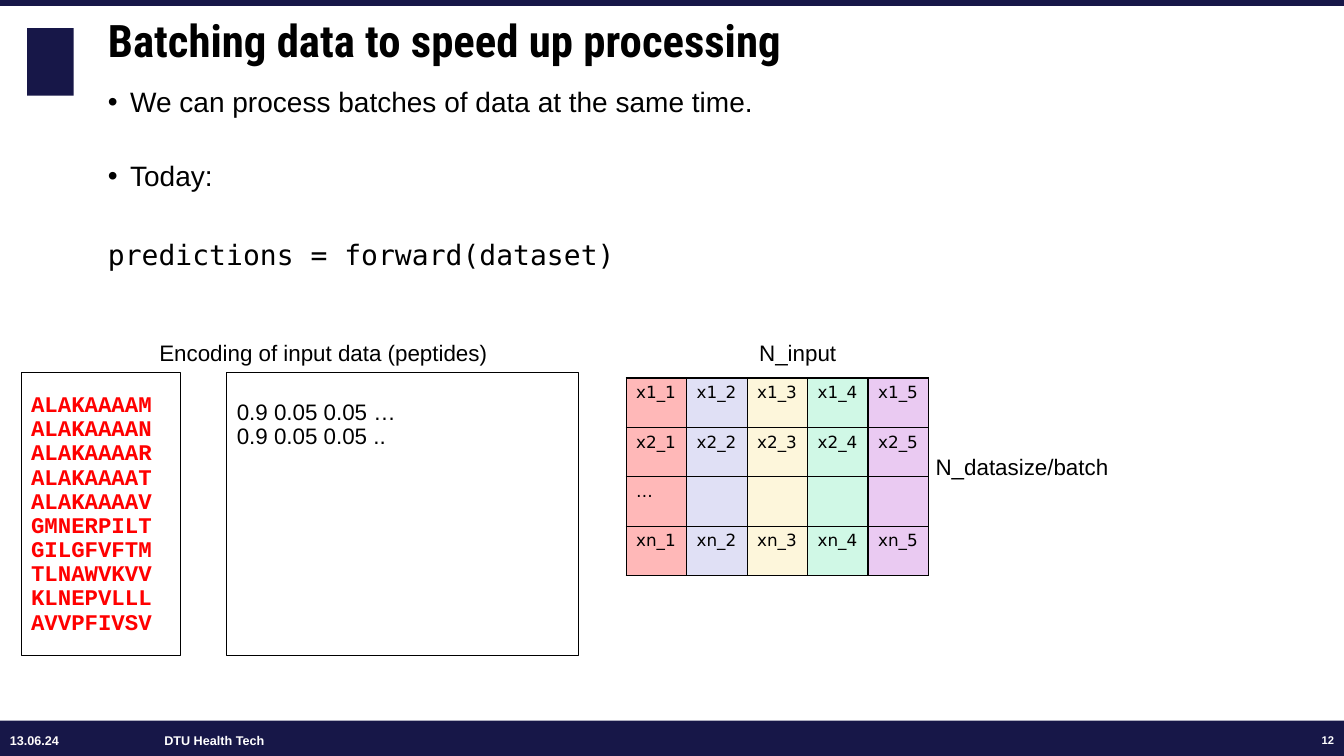
from pptx import Presentation
from pptx.dml.color import RGBColor
from pptx.enum.shapes import MSO_SHAPE
from pptx.enum.text import MSO_ANCHOR, MSO_AUTO_SIZE, PP_ALIGN
from pptx.oxml.ns import qn
from pptx.util import Inches, Pt
from lxml.etree import SubElement

# Content
COLORS = {"navy": "171748", "white": "FFFFFF", "date": "FFFCFB", "black": "000000", "red": "FF0000"}
COLUMN_FILLS = ["FFB8B8", "E0E0F5", "FDF6DB", "D0F8E6", "EACAF2"]
TITLE = "Batching data to speed up processing"
# text, font, bullet, space before in points
BODY = [
    ("We can process batches of data at the same time.", "Arial", True, 0),
    ("Today:", "Arial", True, 29),
    ("predictions = forward(dataset)", "DejaVu Sans Mono", False, 32),
]
PEPTIDES = ["ALAKAAAAM", "ALAKAAAAN", "ALAKAAAAR", "ALAKAAAAT", "ALAKAAAAV",
            "GMNERPILT", "GILGFVFTM", "TLNAWVKVV", "KLNEPVLLL", "AVVPFIVSV"]
ENCODING = ["0.9 0.05 0.05 …", "0.9 0.05 0.05 .."]
MATRIX = [
    ["x1_1", "x1_2", "x1_3", "x1_4", "x1_5"],
    ["x2_1", "x2_2", "x2_3", "x2_4", "x2_5"],
    ["…", "", "", "", ""],
    ["xn_1", "xn_2", "xn_3", "xn_4", "xn_5"],
]
# text, left, top, width
LABELS = [
    ("Encoding of input data (peptides)", 1.58, 3.36, 3.29),
    ("N_input", 7.53, 3.36, 0.77),
    ("N_datasize/batch", 9.28, 4.5, 1.73),
]
# text, left, width, left and right margin, size, colour, alignment
FOOTER = [
    ("13.06.24", 0, 1.58, 0.1, 9, "date", PP_ALIGN.LEFT),
    ("DTU Health Tech", 1.63, 3.72, 0, 9, "white", PP_ALIGN.LEFT),
    ("12", 12.7, 0.63, 0.1, 8, "white", PP_ALIGN.RIGHT),
]
COLUMN_WIDTH, ROW_HEIGHT = 0.6, 0.49
PANEL_TOP, PANEL_HEIGHT = 3.7, 2.8


def inches(*lengths):
    return [Inches(length) for length in lengths]


def write(frame, lines, size=16, font="Arial", color="black", bold=False,
          align=PP_ALIGN.LEFT, anchor=MSO_ANCHOR.TOP, spacing=None, margins=None, wrap=True):
    frame.word_wrap = wrap
    frame.auto_size = MSO_AUTO_SIZE.NONE
    frame.vertical_anchor = anchor
    if margins is not None:
        (frame.margin_left, frame.margin_top,
         frame.margin_right, frame.margin_bottom) = inches(*margins)
    for index, line in enumerate(lines):
        paragraph = frame.paragraphs[0] if index == 0 else frame.add_paragraph()
        paragraph.alignment = align
        if spacing:
            paragraph.line_spacing = spacing
        run = paragraph.add_run()
        run.text = line
        run.font.size, run.font.name, run.font.bold = Pt(size), font, bold
        run.font.color.rgb = RGBColor.from_string(COLORS[color])


def add_rectangle(slide, box, fill=None, line=None):
    rectangle = slide.shapes.add_shape(MSO_SHAPE.RECTANGLE, *inches(*box))
    rectangle.shadow.inherit = False
    if fill:
        rectangle.fill.solid()
        rectangle.fill.fore_color.rgb = RGBColor.from_string(COLORS[fill])
    else:
        rectangle.fill.background()
    if line:
        rectangle.line.color.rgb = RGBColor.from_string(COLORS[line])
        rectangle.line.width = Pt(0.75)
    else:
        rectangle.line.fill.background()
    return rectangle


def place(shape, left, top, width, height):
    shape.left, shape.top, shape.width, shape.height = inches(left, top, width, height)


def set_bullet(paragraph, bullet):
    properties = paragraph._p.get_or_add_pPr()
    indent = Inches(0.22) if bullet else 0
    properties.set("marL", str(indent))
    properties.set("indent", str(-indent))
    if bullet:
        SubElement(properties, qn("a:buChar"), char="•")
    else:
        SubElement(properties, qn("a:buNone"))


def add_borders(cell):
    properties = cell._tc.get_or_add_tcPr()
    for side in ("lnL", "lnR", "lnT", "lnB"):
        border = SubElement(properties, qn(f"a:{side}"), w=str(Pt(1)))
        fill = SubElement(border, qn("a:solidFill"))
        SubElement(fill, qn("a:srgbClr"), val=COLORS["black"])


def add_matrix(slide):
    columns, rows = len(COLUMN_FILLS), len(MATRIX)
    matrix = slide.shapes.add_table(
        rows, columns, *inches(6.21, 3.75, columns * COLUMN_WIDTH, rows * ROW_HEIGHT)).table
    matrix.first_row = matrix.horz_banding = False
    for row, values in enumerate(MATRIX):
        for column, value in enumerate(values):
            cell = matrix.cell(row, column)
            cell.margin_right = 0
            add_borders(cell)
            cell.fill.solid()
            cell.fill.fore_color.rgb = RGBColor.from_string(COLUMN_FILLS[column])
            if value:
                write(cell.text_frame, [value], size=12, font="DejaVu Sans")


def main():
    deck = Presentation()
    deck.slide_width, deck.slide_height = inches(13.33, 7.5)
    slide = deck.slides.add_slide(deck.slide_layouts[1])
    title, body = slide.placeholders

    # Bands and emblem block
    add_rectangle(slide, (0, 7.15, 13.33, 0.35), fill="navy")
    add_rectangle(slide, (0, 0, 13.33, 0.06), fill="navy")
    add_rectangle(slide, (0.27, 0.28, 0.46, 0.67), fill="navy")

    # Title and body
    place(title, 1.07, 0, 11.58, 0.66)
    write(title.text_frame, [TITLE], size=32, font="Roboto Condensed", bold=True,
          anchor=MSO_ANCHOR.BOTTOM, margins=(0, 0, 0, 0))
    place(body, 1.07, 0.84, 11.58, 2.4)
    write(body.text_frame, [text for text, *_ in BODY], size=20, margins=(0, 0, 0, 0))
    for paragraph, (_, font, bullet, gap) in zip(body.text_frame.paragraphs, BODY):
        paragraph.space_before = Pt(gap)
        set_bullet(paragraph, bullet)
        paragraph.runs[0].font.name = font

    # Peptides and their encoding
    peptides = add_rectangle(slide, (0.21, PANEL_TOP, 1.58, PANEL_HEIGHT), line="black")
    write(peptides.text_frame, PEPTIDES, font="Courier New", color="red", bold=True,
          anchor=MSO_ANCHOR.MIDDLE, spacing=0.9)
    encoding = add_rectangle(slide, (2.25, PANEL_TOP, 3.49, PANEL_HEIGHT), line="black")
    write(encoding.text_frame, ENCODING, spacing=0.9, margins=(0.1, 0.28, 0.1, 0.05))

    # Input matrix and labels
    add_matrix(slide)
    for text, left, top, width in LABELS:
        label = slide.shapes.add_textbox(*inches(left, top, width, 0.27))
        write(label.text_frame, [text], margins=(0, 0, 0, 0), wrap=False)

    # Footer
    for text, left, width, margin, size, color, align in FOOTER:
        entry = slide.shapes.add_textbox(*inches(left, 7.17, width, 0.35))
        write(entry.text_frame, [text], size=size, color=color, bold=True, align=align,
              anchor=MSO_ANCHOR.MIDDLE, margins=(margin, 0, margin, 0))

    deck.save("out.pptx")


if __name__ == "__main__":
    main()
